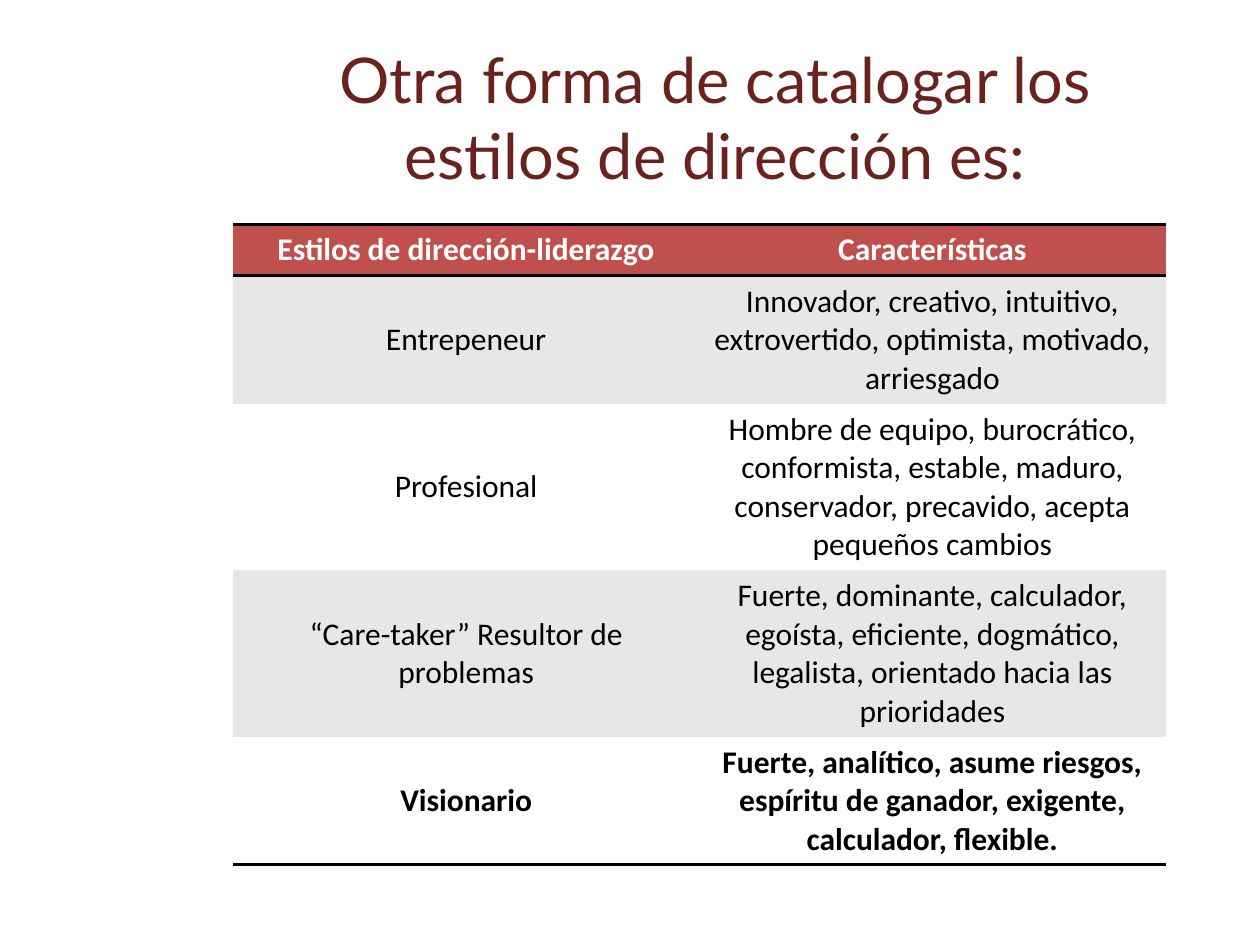
"""Build a slide with a table of management styles and their traits."""
from lxml import etree
from pptx import Presentation
from pptx.dml.color import RGBColor
from pptx.enum.text import MSO_ANCHOR, PP_ALIGN
from pptx.oxml.ns import qn
from pptx.util import Inches, Pt

CENTER = PP_ALIGN.CENTER
MIDDLE = MSO_ANCHOR.MIDDLE
PLAIN_TABLE_STYLE = "{2D5ABB26-0587-4C30-8999-92F81FD0307C}"

TITLE = "Otra forma de catalogar los estilos de dirección es:"
ROWS = [
    ("Estilos de dirección-liderazgo", "Características"),
    ("Entrepeneur",
     "Innovador, creativo, intuitivo, extrovertido, optimista, motivado, arriesgado"),
    ("Profesional",
     "Hombre de equipo, burocrático, conformista, estable, maduro, conservador, "
     "precavido, acepta pequeños cambios"),
    ("“Care-taker” Resultor de problemas",
     "Fuerte, dominante, calculador, egoísta, eficiente, dogmático, legalista, "
     "orientado hacia las prioridades"),
    ("Visionario",
     "Fuerte, analítico, asume riesgos, espíritu de ganador, exigente, calculador, "
     "flexible."),
]
ROW_HEIGHTS = [0.41, 1.01, 1.32, 1.32, 1.01]
COLUMN_WIDTH = 3.7
LEFT = 1.85
TABLE_TOP = 1.78
THEME = {
    "title_font": "Lato", "title_size": 36, "title": "6A221D",
    "body_font": "Calibri", "body_size": 18, "text": "000000",
    "header_text": "FFFFFF", "header": "C0504D",
    "bands": ("FFFFFF", "E7E7E7"), "rule": "000000", "rule_width": 2,
}


def style_paragraph(paragraph, kind, color, bold=False):
    paragraph.alignment = CENTER
    paragraph.font.name = THEME[f"{kind}_font"]
    paragraph.font.size = Pt(THEME[f"{kind}_size"])
    paragraph.font.bold = bold
    paragraph.font.color.rgb = RGBColor.from_string(color)


def add_border(cell, side):
    properties = cell._tc.get_or_add_tcPr()
    line = etree.SubElement(properties, qn(f"a:{side}"), w=str(Pt(THEME["rule_width"])))
    fill = etree.SubElement(line, qn("a:solidFill"))
    etree.SubElement(fill, qn("a:srgbClr"), val=THEME["rule"])


def add_title(slide):
    title = slide.shapes.title
    title.left, title.top = Inches(LEFT), Inches(0.3)
    title.width, title.height = Inches(7.65), Inches(1.25)
    title.text_frame.text = TITLE
    title.text_frame.vertical_anchor = MIDDLE
    style_paragraph(title.text_frame.paragraphs[0], "title", THEME["title"])


def add_styles_table(slide):
    columns = len(ROWS[0])
    table = slide.shapes.add_table(
        len(ROWS), columns, Inches(LEFT), Inches(TABLE_TOP),
        Inches(COLUMN_WIDTH * columns), Inches(sum(ROW_HEIGHTS))).table
    table._tbl.tblPr.find(qn("a:tableStyleId")).text = PLAIN_TABLE_STYLE
    table.horz_banding = False
    last = len(ROWS) - 1
    for row_index, (texts, height) in enumerate(zip(ROWS, ROW_HEIGHTS)):
        table.rows[row_index].height = Inches(height)
        header = row_index == 0
        background = THEME["header"] if header else THEME["bands"][row_index % 2]
        color = THEME["header_text"] if header else THEME["text"]
        for column_index, text in enumerate(texts):
            cell = table.cell(row_index, column_index)
            cell.text = text
            cell.vertical_anchor = MIDDLE
            style_paragraph(cell.text_frame.paragraphs[0], "body", color,
                            bold=row_index in (0, last))
            if header:
                add_border(cell, "lnT")
            if row_index in (0, last):
                add_border(cell, "lnB")
            cell.fill.solid()
            cell.fill.fore_color.rgb = RGBColor.from_string(background)


def main():
    presentation = Presentation()
    presentation.slide_width, presentation.slide_height = Inches(10), Inches(7.5)
    slide = presentation.slides.add_slide(presentation.slide_layouts[5])
    add_title(slide)
    add_styles_table(slide)
    presentation.save("out.pptx")


if __name__ == "__main__":
    main()
